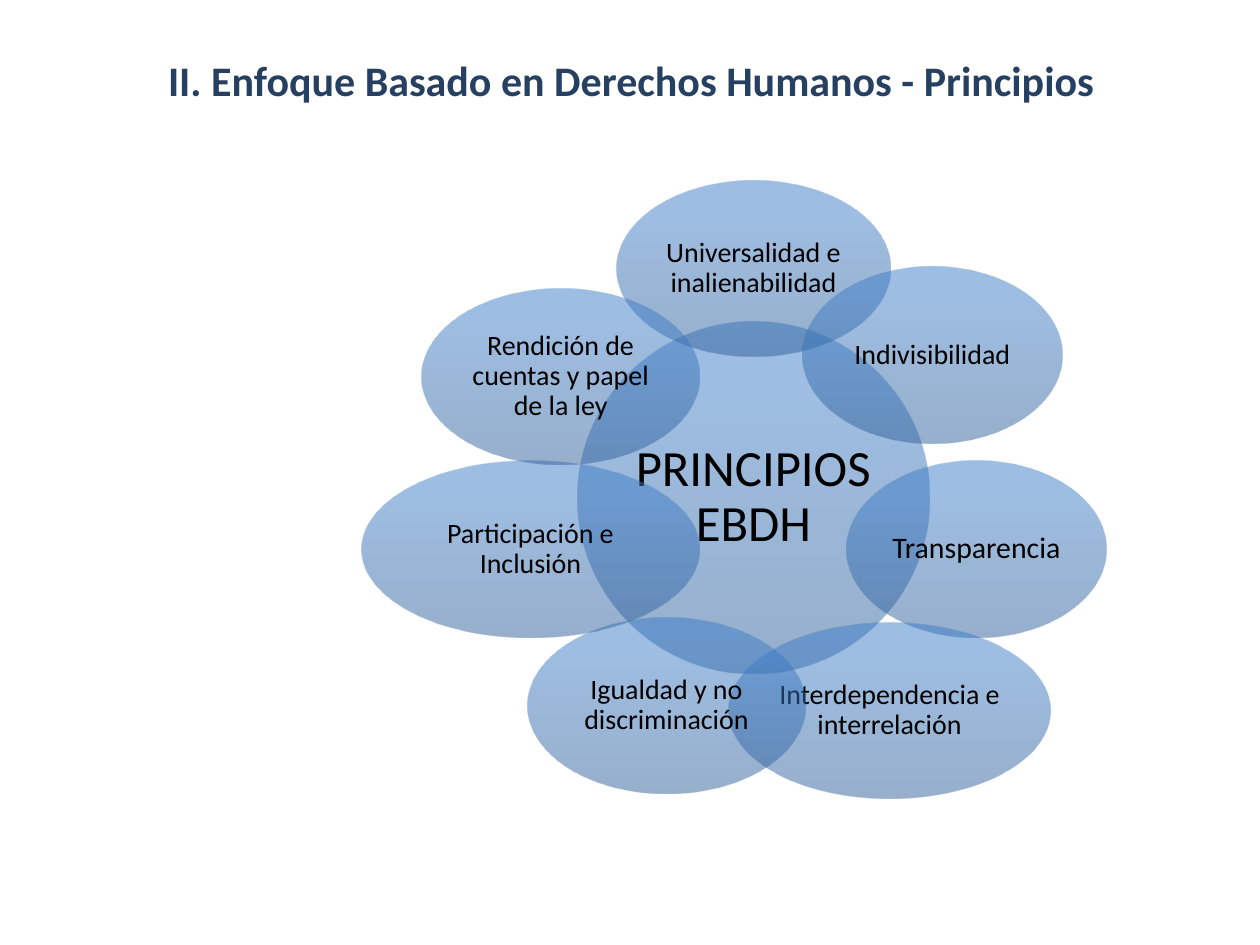
from lxml import etree
from pptx import Presentation
from pptx.dml.color import RGBColor as Rgb
from pptx.enum.shapes import MSO_SHAPE as Geo
from pptx.enum.text import MSO_ANCHOR as Anchor, PP_ALIGN as Align
from pptx.oxml import parse_xml
from pptx.oxml.ns import nsdecls, qn
from pptx.util import Inches, Pt

HUES = {"title": "254061", "text": "000000", "back": "FFFFFF",
        "low": "2F5F99", "mid": "3D7CC7", "top": "3A7CCB"}
STOPS = [("low", 0), ("mid", 80), ("top", 100)]
HIGH = 1.4
PETALS = [
    ("Universalidad e inalienabilidad", 5.98, 2.13, 2.18, 16),
    ("Indivisibilidad", 7.4, 2.82, 2.06, 16),
    ("Transparencia", 7.75, 4.36, 2.06, 17),
    ("Interdependencia e interrelación", 7.06, 5.64, 2.55, 16),
    ("Igualdad y no discriminación", 5.29, 5.6, 2.2, 16),
    ("Participación e Inclusión", 4.21, 4.36, 2.68, 16),
    ("Rendición de cuentas y papel de la ley", 4.45, 2.99, 2.2, 16),
]


class Deck:
    font = "Calibri"

    def __init__(self):
        self.prs = Presentation()
        self.prs.slide_width, self.prs.slide_height = Inches(10), Inches(7.5)
        self.slide = self.prs.slides.add_slide(self.prs.slide_layouts[5])

    def label(self, shape, text, size, hue, bold=False):
        frame = shape.text_frame
        frame.text = text
        frame.word_wrap = True
        frame.vertical_anchor = Anchor.MIDDLE
        para = frame.paragraphs[0]
        para.alignment = Align.CENTER
        para.font.name, para.font.size, para.font.bold = self.font, Pt(size), bold
        para.font.color.rgb = Rgb.from_string(HUES[hue])
        return frame

    def title(self, text):
        shape = self.slide.shapes.title
        shape.left, shape.top = Inches(0.51), Inches(0.28)
        shape.width, shape.height = Inches(9), Inches(0.71)
        shape.fill.solid()
        shape.fill.fore_color.rgb = Rgb.from_string(HUES["back"])
        tint = shape.element.spPr.find(".//" + qn("a:srgbClr"))
        etree.SubElement(tint, qn("a:alpha")).set("val", "45000")
        self.label(shape, text, 24, "title", True)

    def shade(self, shape):
        stops = "".join(
            f'<a:gs pos="{pos * 1000}"><a:srgbClr val="{HUES[hue]}">'
            '<a:alpha val="50000"/></a:srgbClr></a:gs>' for hue, pos in STOPS)
        grad = parse_xml(f'<a:gradFill {nsdecls("a")} rotWithShape="1">'
                         f'<a:gsLst>{stops}</a:gsLst>'
                         '<a:lin ang="16200000" scaled="0"/></a:gradFill>')
        shape.element.spPr.find(qn("a:prstGeom")).addnext(grad)

    def oval(self, text, x, y, wide, high, size, inset):
        shape = self.slide.shapes.add_shape(
            Geo.OVAL, Inches(x - wide / 2), Inches(y - high / 2),
            Inches(wide), Inches(high))
        shape.shadow.inherit = False
        shape.line.fill.background()
        self.shade(shape)
        frame = self.label(shape, text, size, "text")
        frame.paragraphs[0].line_spacing = 0.9
        frame.margin_left = frame.margin_right = Inches(inset)
        frame.margin_top = frame.margin_bottom = Inches(inset)

    def save(self):
        self.prs.save("out.pptx")


def main():
    deck = Deck()
    deck.title("II. Enfoque Basado en Derechos Humanos - Principios")
    deck.oval("PRINCIPIOS EBDH", 5.98, 3.95, 2.79, 2.79, 29, 0.04)
    for text, x, y, wide, size in PETALS:
        deck.oval(text, x, y, wide, HIGH, size, 0.02)
    deck.save()


if __name__ == "__main__":
    main()
